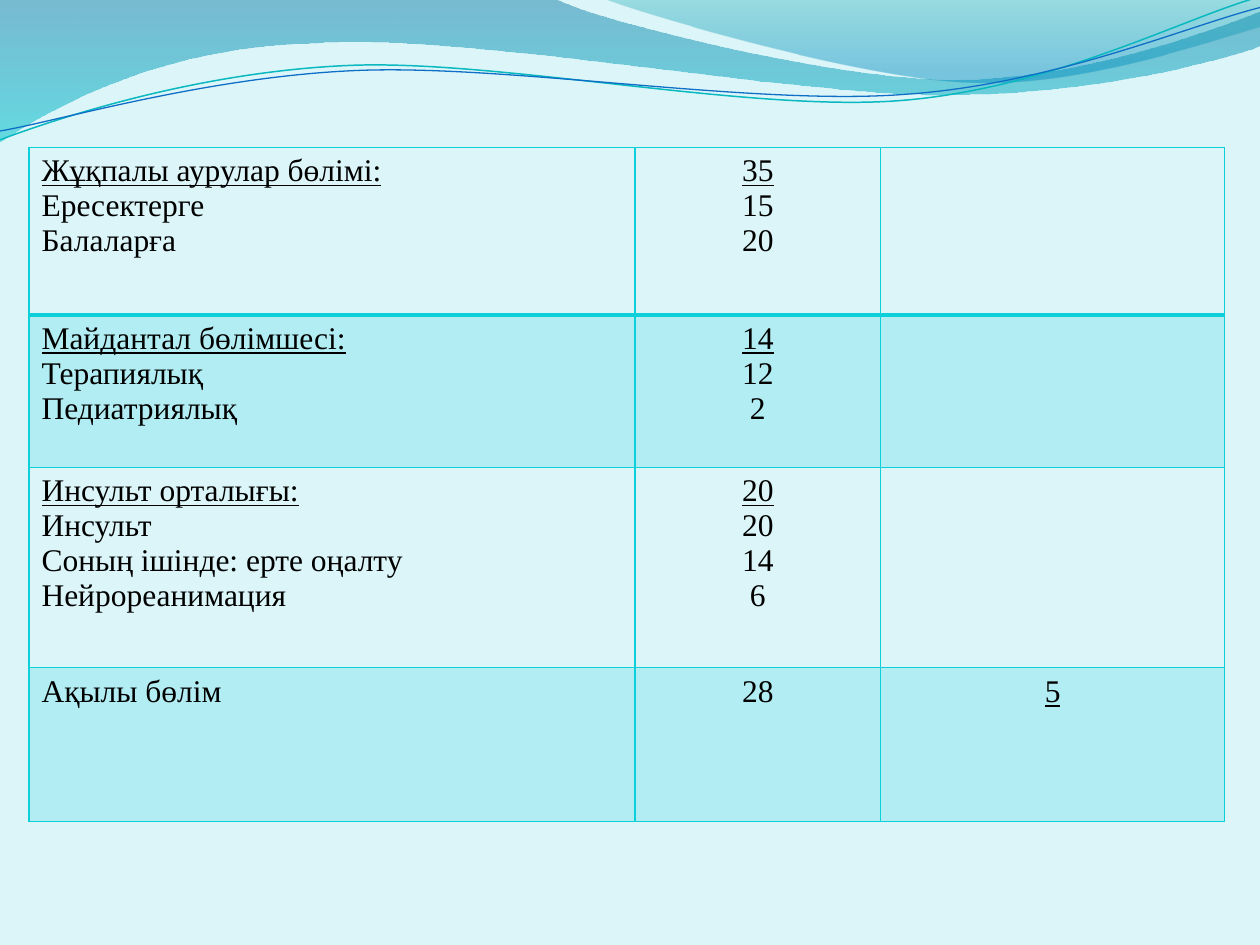
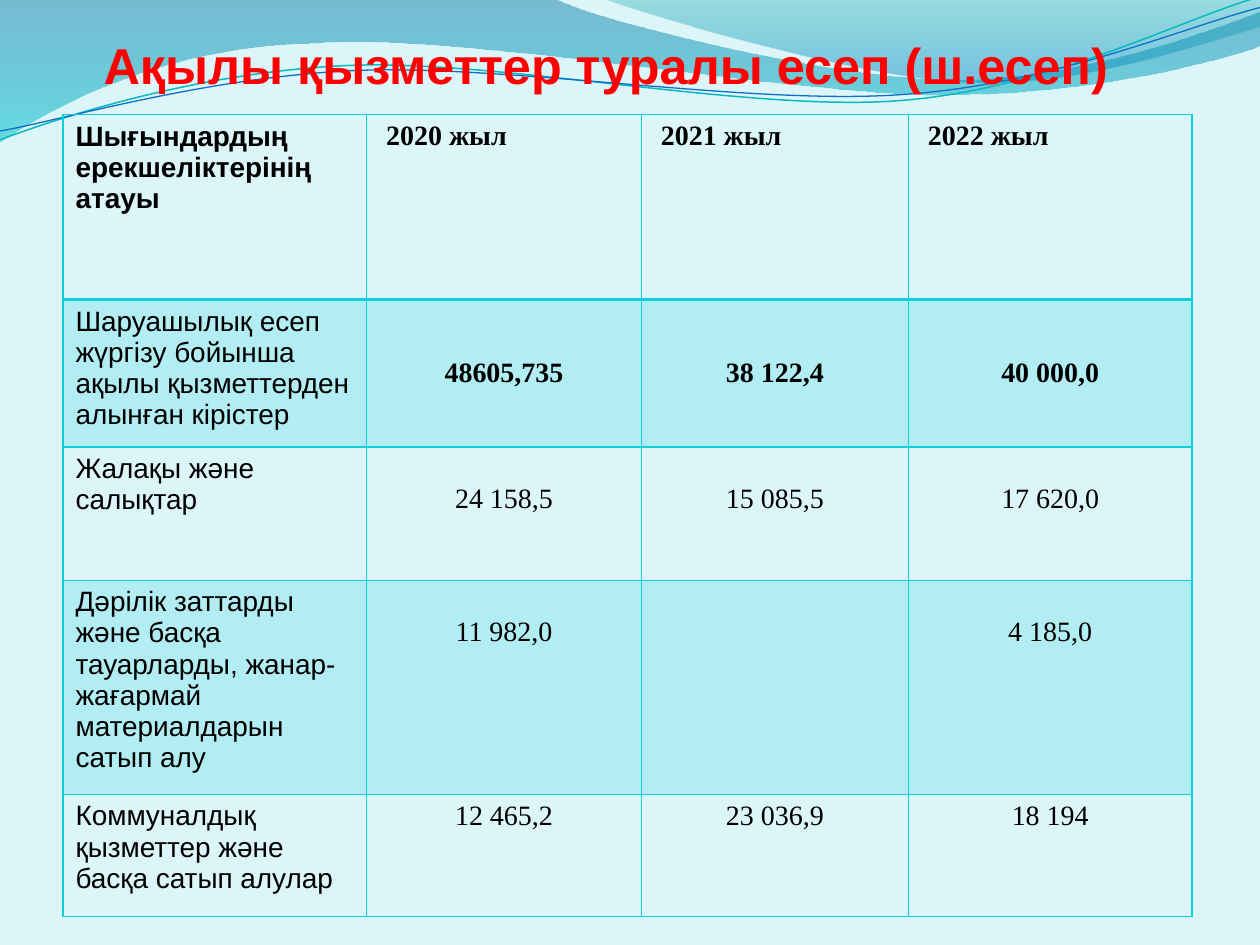
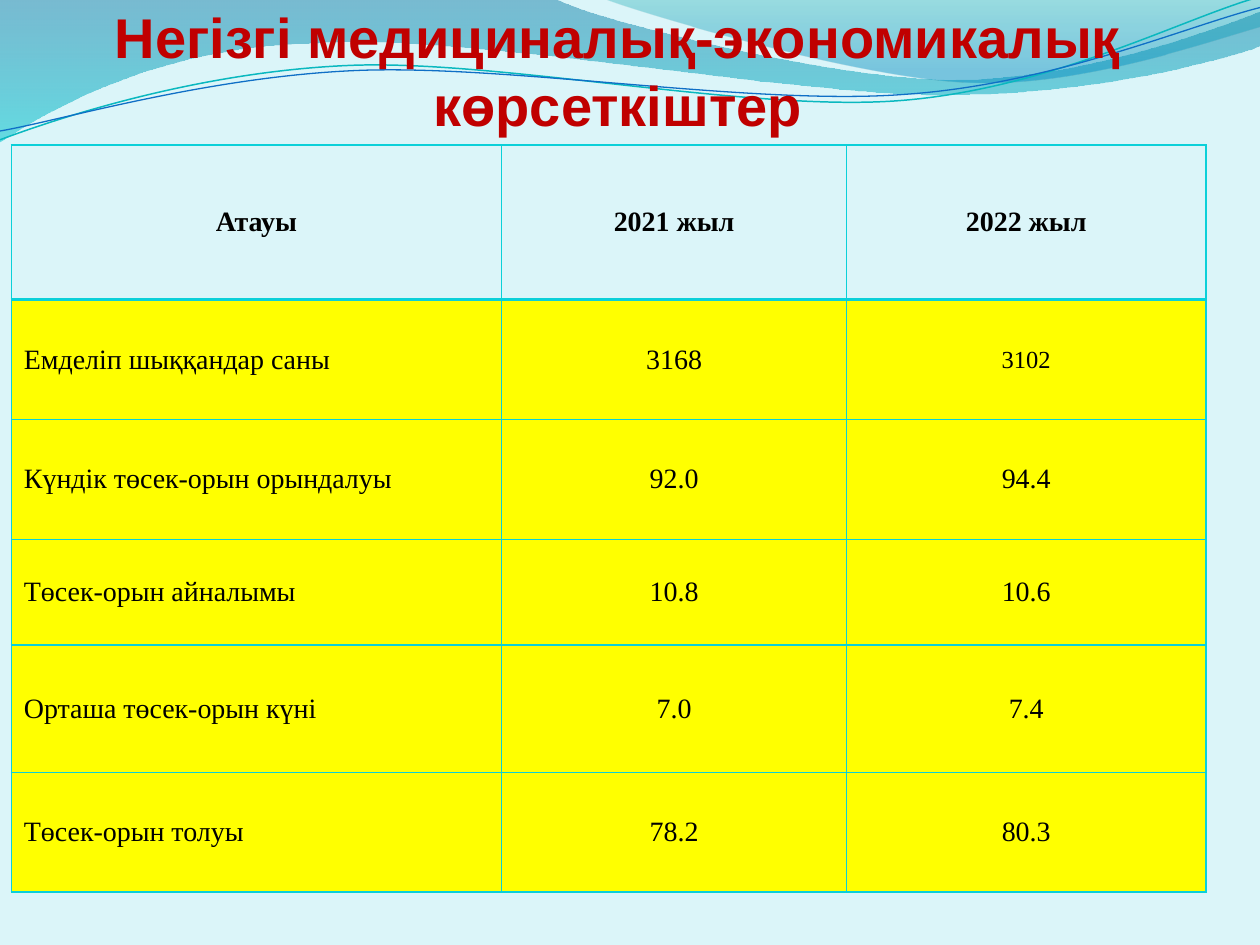
"""Builds three slides of hospital bed, paid service and indicator tables."""
import lxml.etree
import pptx
import pptx.dml.color
import pptx.enum.text
import pptx.oxml.ns
import pptx.util

Inches, Pt = pptx.util.Inches, pptx.util.Pt
ALIGN, ANCHOR = pptx.enum.text.PP_ALIGN, pptx.enum.text.MSO_ANCHOR
qn = pptx.oxml.ns.qn

SERIF, SANS = "Times New Roman", "Arial"
PAPER, TURQUOISE, YELLOW, BLACK = "DBF5F9", "0BD0D9", "FFFF00", "000000"

WAVES = [
    {"start": (0, 0),
     "steps": [[(4.4, -0.01)],
               [(4.76, 0.17), (6.64, 0.63), (7.58, 0.63)],
               [(8.53, 0.63), (9.58, 0.26), (10, 0.09)],
               [(10.01, 0.36)],
               [(9.83, 0.44), (8.7, 0.76), (7.46, 0.75)],
               [(6.22, 0.75), (3.82, 0.28), (2.57, 0.34)],
               [(1.29, 0.36), (0.46, 0.83), (-0.01, 1.13)],
               [(0, 0)]],
     "gradient": [(0, "0074A1", 45), (1, "00C6CF", 55)]},
    {"start": (4.79, -0.01),
     "steps": [[(5.09, 0.11), (6.82, 0.62), (7.69, 0.65)],
               [(8.56, 0.69), (9.61, 0.32), (10, 0.21)],
               [(10, 0)],
               [(4.79, -0.01)]],
     "gradient": [(0, "00A1A9", 30), (0.8, "008BBF", 45)]},
    {"start": (0, 1.11),
     "steps": [[(0.48, 0.93), (1.58, 0.57), (2.77, 0.52)],
               [(3.95, 0.47), (5.93, 0.89), (7.13, 0.8)],
               [(8.33, 0.71), (9.38, 0.15), (9.98, -0.02)]],
     "line": ("0AB8BF", 0.85)},
    {"start": (0, 1.04),
     "steps": [[(0.47, 0.96), (1.64, 0.61), (2.83, 0.56)],
               [(4.03, 0.51), (5.97, 0.84), (7.17, 0.75)],
               [(8.36, 0.67), (9.41, 0.21), (10, 0.06)]],
     "line": ("0F6FC6", 0.75)},
]

LABEL = {"align": ALIGN.LEFT}
VALUE = {"align": ALIGN.CENTER}
BOLD = {"bold": True}
MIDDLE = {"anchor": ANCHOR.MIDDLE}
LOWERED = {"top": 0.29}
HEADING = BOLD | LABEL
CENTRED_HEADING = BOLD | VALUE

SHEETS = [
    {"at": (0.23, 1.17), "columns": [4.81, 1.95, 2.73], "height": 5.35,
     "style": {"size": 18, "font": SERIF}, "bands": [None, TURQUOISE],
     "rows": [
         (1.33, "_Жұқпалы аурулар бөлімі:\nЕресектерге\nБалаларға",
          ["_35\n15\n20", ""], {}, {}),
         (1.21, "_Майдантал бөлімшесі:\nТерапиялық\nПедиатриялық",
          ["_14\n12\n2", ""], {}, {}),
         (1.59, "_Инсульт орталығы:\nИнсульт\nСоның ішінде: ерте оңалту\nНейрореанимация",
          ["_20\n20\n14\n6", ""], {}, {}),
         (1.22, "Ақылы бөлім", ["28", "_5"], {}, {}),
     ]},
    {"title": ("Ақылы қызметтер туралы есеп (ш.есеп)", 28.8, "FF0000",
               (0.4, 0.21, 8.82, 0.54)),
     "at": (0.5, 0.91), "columns": [2.41, 2.18, 2.12, 2.25], "height": 6.1,
     "style": {"size": 16, "font": SERIF}, "label": {"font": SANS},
     "bands": [None, TURQUOISE],
     "rows": [
         (1.47, "Шығындардың ерекшеліктерінің атауы",
          [" 2020 жыл", " 2021 жыл", " 2022 жыл"], HEADING, HEADING),
         (0.88, "Шаруашылық есеп жүргізу бойынша ақылы қызметтерден алынған кірістер",
          ["48605,735", "38 122,4", "40 000,0"], {}, BOLD | MIDDLE),
         (1.06, "Жалақы және салықтар",
          ["24 158,5", "15 085,5", "17 620,0"], {}, LOWERED),
         (1.38, "Дәрілік заттарды және басқа тауарларды, жанар-жағармай материалдарын сатып алу",
          ["11 982,0", "", "4 185,0"], {}, LOWERED),
         (0.97, "Коммуналдық қызметтер және басқа сатып алулар",
          ["12 465,2", "23 036,9", "18 194"], {}, {}),
     ]},
    {"title": ("Негізгі медициналық-экономикалық көрсеткіштер", 32, "C00000",
               (0, 0.39, 9.81, 0.7)),
     "at": (0.09, 1.15), "columns": [3.89, 2.74, 2.85], "height": 5.93,
     "style": {"size": 16, "font": SERIF} | MIDDLE, "bands": [YELLOW, YELLOW],
     "sizes": {"3102": 14},
     "rows": [
         (1.23, "Атауы", ["2021 жыл", "2022 жыл"], CENTRED_HEADING, CENTRED_HEADING),
         (0.95, "Емделіп шыққандар саны", ["3168", "3102"], {}, {}),
         (0.95, "Күндік төсек-орын орындалуы", ["92.0", "94.4"], {}, {}),
         (0.84, "Төсек-орын айналымы", ["10.8", "10.6"], {}, {}),
         (1.01, "Орташа төсек-орын күні", ["7.0", "7.4"], {}, {}),
         (0.95, "Төсек-орын толуы", ["78.2", "80.3"], {}, {}),
     ]},
]


def rgb(colour):
    return pptx.dml.color.RGBColor.from_string(colour)


def set_alpha(tint, percent):
    lxml.etree.SubElement(tint, qn("a:alpha")).set("val", str(percent * 1000))


def bend(ribbon, steps):
    segments = iter(list(ribbon.element.iter(qn("a:lnTo"))))
    for step in steps:
        first, *others = [next(segments) for _ in step]
        if others:
            first.tag = qn("a:cubicBezTo")
            for segment in others:
                first.append(segment[0])
                segment.getparent().remove(segment)


def draw_wave(slide, layout, wave):
    outline = slide.shapes.build_freeform(*map(Inches, wave["start"]))
    corners = [(Inches(x), Inches(y)) for step in wave["steps"] for x, y in step]
    outline.add_line_segments(corners, close=False)
    ribbon = outline.convert_to_shape()
    bend(ribbon, wave["steps"])
    ribbon.shadow.inherit = False
    if "gradient" in wave:
        ribbon.line.fill.background()
        ribbon.fill.gradient()
        ribbon.fill.gradient_angle = 270
        for stop, (position, colour, _) in zip(ribbon.fill.gradient_stops, wave["gradient"]):
            stop.position = position
            stop.color.rgb = rgb(colour)
        tints = list(ribbon.element.spPr.iter(qn("a:srgbClr")))
        for tint, (_, _, alpha) in zip(tints, wave["gradient"]):
            set_alpha(tint, alpha)
    else:
        colour, width = wave["line"]
        ribbon.fill.background()
        ribbon.line.color.rgb = rgb(colour)
        ribbon.line.width = Pt(width)
    layout.shapes.element.append(ribbon.element)


def add_run(paragraph, text, font, size, colour, bold=False, underline=False):
    run = paragraph.add_run()
    run.text = text
    run.font.name = font
    run.font.size = Pt(size)
    run.font.bold = bold
    run.font.underline = underline
    run.font.color.rgb = rgb(colour)


def add_title(slide, text, size, colour, place):
    heading = slide.shapes.add_textbox(*map(Inches, place)).text_frame
    heading.word_wrap = True
    heading.vertical_anchor = ANCHOR.BOTTOM
    heading.margin_left = heading.margin_right = heading.margin_bottom = 0
    heading.paragraphs[0].alignment = ALIGN.CENTER
    add_run(heading.paragraphs[0], text, SANS, size, colour, bold=True)


def draw_borders(cell, widths):
    properties = cell._tc.get_or_add_tcPr()
    for side, width in widths.items():
        border = lxml.etree.SubElement(properties, qn("a:ln" + side))
        border.set("w", str(Pt(width)))
        paint = lxml.etree.SubElement(border, qn("a:solidFill"))
        lxml.etree.SubElement(paint, qn("a:srgbClr")).set("val", TURQUOISE)


def fill_cell(cell, band):
    if band is None:
        cell.fill.background()
        return
    cell.fill.solid()
    cell.fill.fore_color.rgb = rgb(band)
    if band == TURQUOISE:
        tint = cell._tc.tcPr.find(qn("a:solidFill")).find(qn("a:srgbClr"))
        set_alpha(tint, 20)


def write_cell(cell, text, style):
    cell.vertical_anchor = style.get("anchor", ANCHOR.TOP)
    cell.margin_top = Inches(style.get("top", 0.05))
    for number, line in enumerate(text.split("\n")):
        frame = cell.text_frame
        paragraph = frame.add_paragraph() if number else frame.paragraphs[0]
        paragraph.alignment = style["align"]
        if line:
            add_run(paragraph, line.removeprefix("_"), style["font"], style["size"], BLACK,
                    style.get("bold", False), line.startswith("_"))


def add_sheet(slide, sheet):
    columns, rows = sheet["columns"], sheet["rows"]
    left, top = sheet["at"]
    holder = slide.shapes.add_table(len(rows), len(columns), Inches(left), Inches(top),
                                    Inches(sum(columns)), Inches(sheet["height"]))
    grid = holder.table
    grid.first_row = grid.horz_banding = False
    for column, width in zip(grid.columns, columns):
        column.width = Inches(width)
    for r, (height, label, values, label_style, value_style) in enumerate(rows):
        grid.rows[r].height = Inches(height)
        for c, text in enumerate([label, *values]):
            own = VALUE | value_style if c else LABEL | sheet.get("label", {}) | label_style
            style = sheet["style"] | own
            style["size"] = sheet.get("sizes", {}).get(text, style["size"])
            cell = grid.cell(r, c)
            draw_borders(cell, {"L": 1, "R": 1, "T": 2 if r == 1 else 1,
                                "B": 2 if r == 0 else 1})
            fill_cell(cell, sheet["bands"][r % 2] if r else None)
            write_cell(cell, text, style)
    holder.height = Inches(sheet["height"])


def main():
    deck = pptx.Presentation()
    deck.slide_width, deck.slide_height = Inches(10), Inches(7.5)
    blank = deck.slide_layouts[6]
    blank.background.fill.solid()
    blank.background.fill.fore_color.rgb = rgb(PAPER)
    slides = [deck.slides.add_slide(blank) for _ in SHEETS]
    for wave in WAVES:
        draw_wave(slides[0], blank, wave)
    for slide, sheet in zip(slides, SHEETS):
        if "title" in sheet:
            add_title(slide, *sheet["title"])
        add_sheet(slide, sheet)
    deck.save("out.pptx")


if __name__ == "__main__":
    main()
